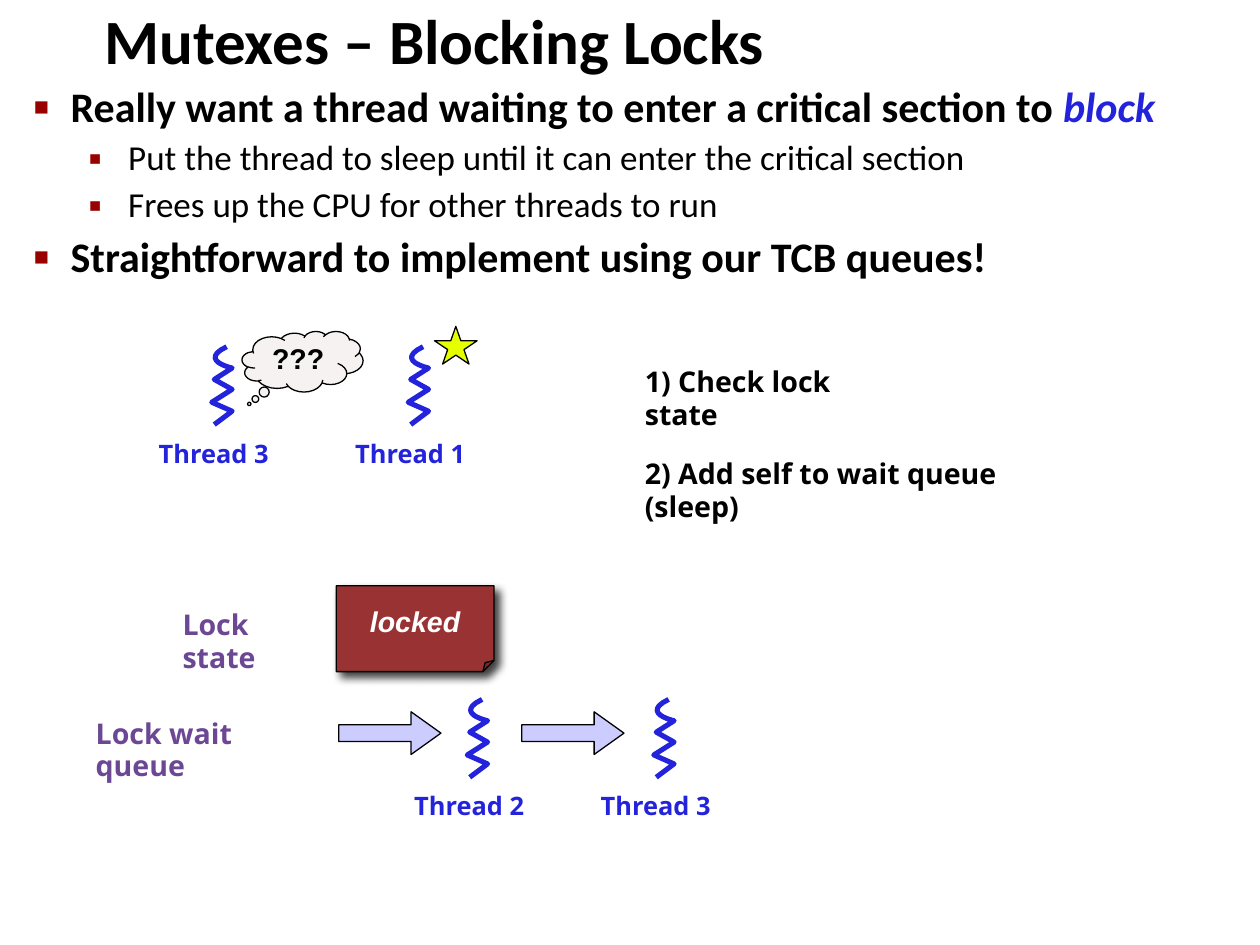
from dataclasses import dataclass

from lxml import etree
from pptx import Presentation
from pptx import util as u
from pptx.dml.color import RGBColor
from pptx.enum import shapes, text
from pptx.oxml import ns

Kind = shapes.MSO_SHAPE
Align = text.PP_ALIGN


@dataclass(frozen=True)
class Theme:
    ink: str = "000000"
    blue: str = "2323DC"
    plum: str = "6B4794"
    red: str = "990000"
    brick: str = "993333"
    lilac: str = "CCCCFF"
    cloud: str = "F6F2F2"
    lemon: str = "E6FF00"
    white: str = "FFFFFF"
    head: float = 36
    main: float = 24
    sub: float = 20
    note: float = 16.3
    tag: float = 14.5
    body: str = "Calibri"
    label: str = "Open Sans"
    plain: str = "Arial"


def rgb(code):
    return RGBColor.from_string(code)


def place(item, x, y, w, h):
    item.left, item.top, item.width, item.height = map(u.Cm, (x, y, w, h))


def add(node, tag, **attrs):
    return etree.SubElement(node, ns.qn(tag), attrs)


def adapt(item, **guides):
    """Set the named adjustment guides of a preset shape."""
    geom = item._element.spPr.find(ns.qn("a:prstGeom"))
    for old in list(geom):
        geom.remove(old)
    values = add(geom, "a:avLst")
    for name, value in guides.items():
        add(values, "a:gd", name=name, fmla=f"val {round(value * 100000)}")


def write(par, words, size, color, font, bold=True, italic=False, align=Align.LEFT):
    """Append one formatted run to a paragraph."""
    par.alignment = align
    par.line_spacing = 0.95
    run = par.add_run()
    run.text = words
    face = run.font
    face.size, face.name = u.Pt(size), font
    face.bold, face.italic = bold, italic
    face.color.rgb = rgb(color)


class Deck:
    def __init__(self, theme):
        self.theme = theme
        self.file = Presentation()
        self.file.slide_width = u.Cm(25.4)
        self.file.slide_height = u.Cm(19.05)
        self.slide = self.file.slides.add_slide(self.file.slide_layouts[1])
        self.items = self.slide.shapes

    def title(self, words, *box):
        item = self.items.title
        place(item, *box)
        item.text_frame.auto_size = text.MSO_AUTO_SIZE.NONE
        t = self.theme
        write(item.text_frame.paragraphs[0], words, t.head, t.ink, t.body)

    def bullets(self, rows, *box):
        """Fill the body; each row is a level and its (words, format) runs."""
        t = self.theme
        looks = [(t.main, 0.74, 0.74, "■", 60), (t.sub, 1.9, 0.8, "▪", 110)]
        item = self.slide.placeholders[1]
        place(item, *box)
        frame = item.text_frame
        frame.auto_size = text.MSO_AUTO_SIZE.NONE
        for i, (level, runs) in enumerate(rows):
            par = frame.add_paragraph() if i else frame.paragraphs[0]
            size, left, hang, mark, scale = looks[level]
            par.level = level
            par.space_before = u.Pt(size * 0.2)
            for words, form in runs:
                form = {"color": t.ink, "bold": level == 0} | form
                write(par, words, size, font=t.body, **form)
            prop = par._p.get_or_add_pPr()
            prop.set("marL", str(u.Cm(left)))
            prop.set("indent", str(-u.Cm(hang)))
            add(add(prop, "a:buClr"), "a:srgbClr", val=t.red)
            add(prop, "a:buSzPct", val=str(scale * 1000))
            add(prop, "a:buChar", char=mark)

    def fit(self, frame, words, **form):
        """Write one unwrapped line without margins."""
        frame.word_wrap = False
        frame.margin_left = frame.margin_right = 0
        frame.margin_top = frame.margin_bottom = 0
        write(frame.paragraphs[0], words, **form)

    def label(self, words, size, color, *box):
        item = self.items.add_textbox(*map(u.Cm, box))
        self.fit(item.text_frame, words, size=size, color=color, font=self.theme.label)

    def shape(self, kind, fill, *box, words="", **form):
        item = self.items.add_shape(kind, *map(u.Cm, box))
        item.shadow.inherit = False
        item.fill.solid()
        item.fill.fore_color.rgb = rgb(fill)
        item.line.color.rgb = rgb(self.theme.ink)
        item.line.width = u.Pt(0.75)
        if words:
            item.text_frame.vertical_anchor = text.MSO_ANCHOR.MIDDLE
            self.fit(item.text_frame, words, size=self.theme.note,
                     font=self.theme.plain, align=Align.CENTER, **form)
        return item

    def shade(self, item):
        """Give a shape a soft shadow to the lower right."""
        glow = add(item._element.spPr.find(ns.qn("a:effectLst")), "a:outerShdw",
                   blurRad=str(u.Pt(5)), dist=str(u.Pt(4.1)),
                   dir="2700000", algn="tl", rotWithShape="0")
        add(add(glow, "a:srgbClr", val=self.theme.ink), "a:alpha", val="75000")

    def arrow(self, x, y):
        item = self.shape(Kind.RIGHT_ARROW, self.theme.lilac, x, y, 2.06, 0.86)
        adapt(item, adj1=0.39, adj2=0.7)

    def thread(self, name, x, y):
        """Draw a hooked zigzag with its name below."""
        t = self.theme
        start, pull, end = (0.58, 0), (0, 0.28), (0.69, 0.43)
        hook = []
        for step in range(13):
            s = step / 12
            near, mid, far = (1 - s) ** 3, 3 * s * (1 - s) ** 2, s * s * (3 - 2 * s)
            hook.append([near * a + mid * b + far * c
                         for a, b, c in zip(start, pull, end)])
        zigzag = [(0.33, 0.66), (0.69, 0.86), (0.28, 1.12), (0.69, 1.3), (0.33, 1.57)]
        dots = [(u.Cm(x + a), u.Cm(y + b)) for a, b in hook + zigzag]
        pen = self.items.build_freeform(*dots[0])
        pen.add_line_segments(dots[1:], close=False)
        item = pen.convert_to_shape()
        item.shadow.inherit = False
        item.fill.background()
        item.line.color.rgb = rgb(t.blue)
        item.line.width = u.Pt(2.89)
        self.label(name, t.tag, t.blue, x - 0.79, y + 1.88, 2.46, 1.19)


def main():
    t = Theme()
    deck = Deck(t)
    deck.title("Mutexes – Blocking Locks", 1.85, 0.2, 21.69, 1.32)
    deck.bullets([
        (0, [("Really want a thread waiting to enter a critical section to ", {}),
             ("block", {"color": t.blue, "italic": True})]),
        (1, [("Put the thread to sleep until it can enter the critical section", {})]),
        (1, [("Frees up the CPU for other threads to run", {})]),
        (0, [("Straightforward to implement using our TCB queues!", {})]),
    ], 0.43, 1.57, 24.46, 15.6)

    for name, x, y in [("Thread 1", 7.95, 6.99), ("Thread 3", 3.99, 6.99),
                       ("Thread 2", 9.14, 14.1), ("Thread 3", 12.9, 14.1)]:
        deck.thread(name, x, y)
    deck.shape(Kind.STAR_5_POINT, t.lemon, 8.76, 6.58, 0.86, 0.76)
    cloud = deck.shape(Kind.CLOUD_CALLOUT, t.cloud, 4.88, 6.68, 2.44, 1.22,
                       words="???", color=t.ink)
    adapt(cloud, adj1=-0.44, adj2=0.7)

    deck.label("1) Check lock state", t.note, t.ink, 13, 7.39, 4.9, 0.66)
    deck.label("2) Add self to wait queue (sleep)", t.note, t.ink, 13, 9.25, 8.2, 0.66)

    deck.label("Lock state", t.note, t.plum, 3.68, 12.29, 2.62, 0.66)
    lock = deck.shape(Kind.FOLDED_CORNER, t.brick, 6.78, 11.81, 3.18, 1.73,
                      words="locked", color=t.white, italic=True)
    adapt(lock, adj=0.13)
    deck.shade(lock)
    deck.label("Lock wait queue", t.note, t.plum, 1.93, 14.48, 4.14, 0.66)
    for x in (6.83, 10.52):
        deck.arrow(x, 14.35)
    deck.file.save("out.pptx")


if __name__ == "__main__":
    main()
